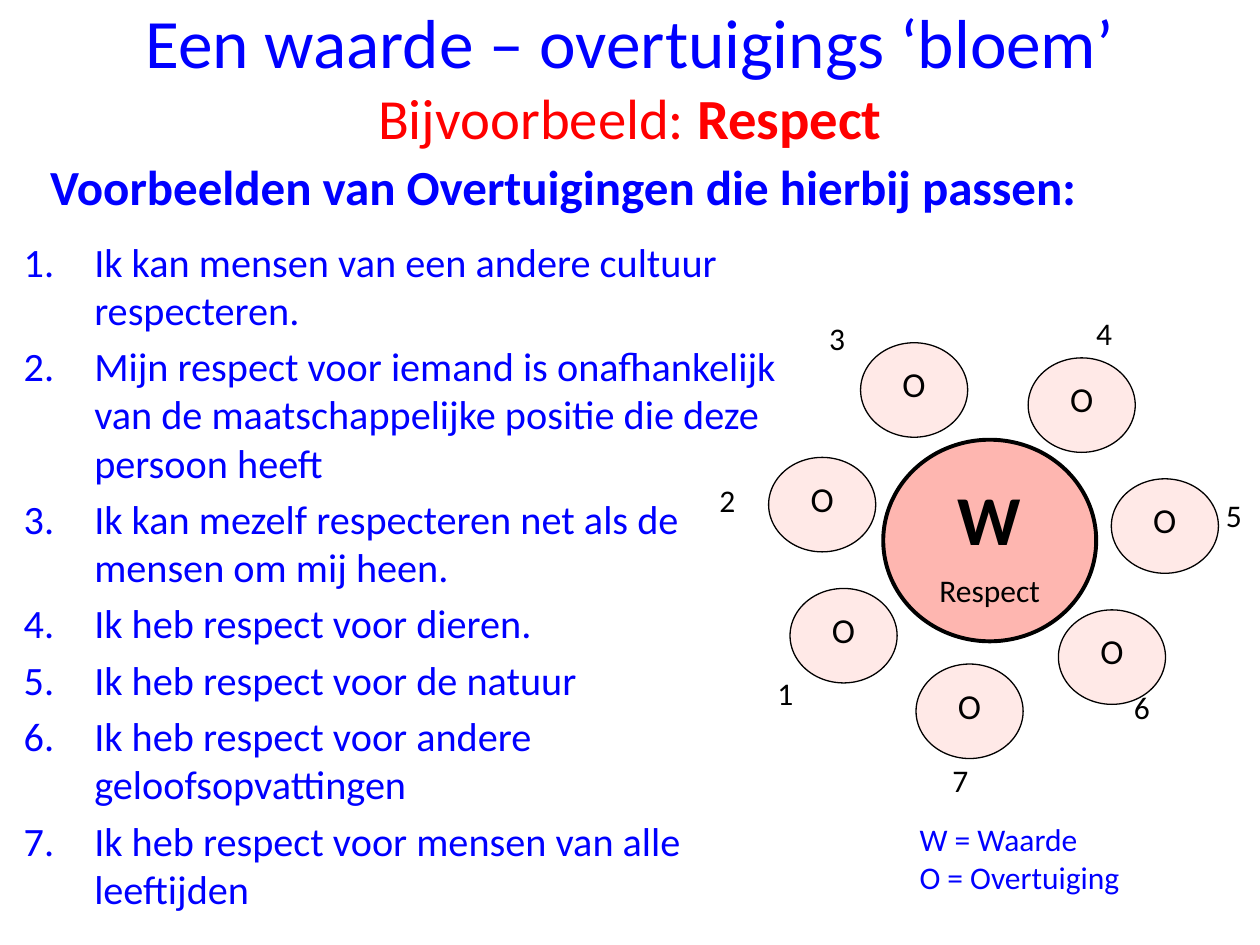
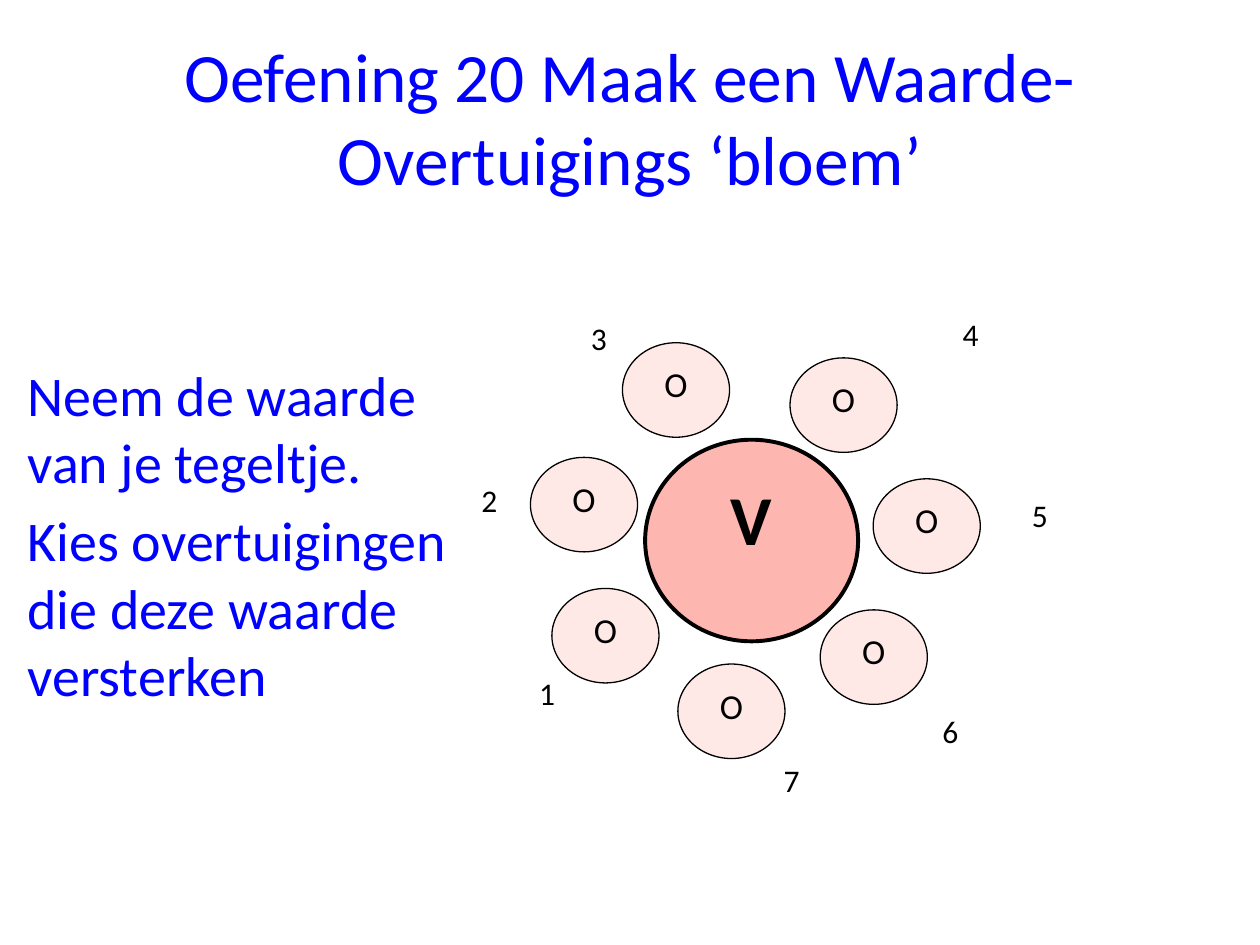
from dataclasses import dataclass

from lxml import etree
from pptx import Presentation
from pptx.dml.color import RGBColor
from pptx.enum.shapes import MSO_SHAPE
from pptx.enum.text import MSO_ANCHOR, MSO_AUTO_SIZE, PP_ALIGN
from pptx.oxml.ns import qn
from pptx.util import Inches, Pt

OVAL, RECT = MSO_SHAPE.OVAL, MSO_SHAPE.RECTANGLE
LEFT, CENTER = PP_ALIGN.LEFT, PP_ALIGN.CENTER
TOP, MIDDLE = MSO_ANCHOR.TOP, MSO_ANCHOR.MIDDLE
NO_FIT = MSO_AUTO_SIZE.NONE
TITLE_ONLY = 5


@dataclass(frozen=True)
class Theme:
    font: str = "Calibri"
    blue: str = "0000FF"
    red: str = "FF0000"
    black: str = "000000"
    white: str = "FFFFFF"
    heart: str = "FEB6B0"
    petal: str = "FFE9E7"
    title: float = 39.6
    sub: float = 32.4
    task: float = 32
    head: float = 28
    list: float = 23
    value: float = 40
    belief: float = 20
    small: float = 18


THEME = Theme()

# Offsets from the top left corner of the flower, for beliefs 1 to 7
PETALS = [(0.56, 2.18), (0.39, 1.14), (1.12, 0.23), (2.45, 0.35),
          (3.11, 1.31), (2.69, 2.35), (1.56, 2.78)]
PETAL_SIZE = (0.85, 0.75)
LABELS = [(0.46, 2.86), (0, 1.33), (0.87, 0.04), (2.99, 0),
          (4.02, 1.45), (3.29, 2.97), (1.85, 3.55)]
WIDE_LABELS = LABELS[:3] + [(3.82, 0.01), (4.37, 1.45), (3.66, 3.16), (2.4, 3.55)]
LABEL_SIZE = (0.27, 0.47)

BELIEFS = [
    "Ik kan mensen van een andere cultuur respecteren.",
    "Mijn respect voor iemand is onafhankelijk van de maatschappelijke "
    "positie die deze persoon heeft",
    "Ik kan mezelf respecteren net als de mensen om mij heen.",
    "Ik heb respect voor dieren.",
    "Ik heb respect voor de natuur",
    "Ik heb respect voor andere geloofsopvattingen",
    "Ik heb respect voor mensen van alle leeftijden",
]
TASK = ["Neem de waarde van je tegeltje.",
        "Kies overtuigingen die deze waarde versterken"]


def assign(target, values):
    for name, value in values.items():
        setattr(target, name, value)


def add_run(para, text, size, color, bold=False):
    run = para.add_run()
    run.text = text
    assign(run.font, {"name": THEME.font, "size": Pt(size), "bold": bold})
    run.font.color.rgb = RGBColor.from_string(color)


def set_frame(frame, anchor=TOP, inset=None):
    assign(frame, {"word_wrap": True, "auto_size": NO_FIT, "vertical_anchor": anchor})
    if inset is not None:
        sides = ("left", "right", "top", "bottom")
        assign(frame, {f"margin_{side}": Inches(inset) for side in sides})


def set_indent(para, hang, numbered):
    props = para._p.get_or_add_pPr()
    props.set("marL", str(Inches(hang)))
    props.set("indent", str(-Inches(hang)))
    if numbered:
        etree.SubElement(props, qn("a:buFont"), typeface="+mj-lt")
        etree.SubElement(props, qn("a:buAutoNum"), type="arabicPeriod")


def add_text(slide, box, lines, size, color, align=LEFT, inset=None,
             bold=False, gap=0, hang=0, numbered=False):
    """Add a text box; gap is the space before a paragraph as a share of its size."""
    frame = slide.shapes.add_textbox(*map(Inches, box)).text_frame
    set_frame(frame, inset=inset)
    for i, line in enumerate(lines):
        para = frame.add_paragraph() if i else frame.paragraphs[0]
        assign(para, {"alignment": align, "space_before": Pt(size * gap)})
        if hang:
            set_indent(para, hang, numbered)
        add_run(para, line, size, color, bold)


def add_part(slide, kind, box, fill, line, weight, text, size,
             align=CENTER, inset=None, bold=False):
    """Add a filled shape with one short text at its top."""
    shape = slide.shapes.add_shape(kind, *map(Inches, box))
    shape.shadow.inherit = False
    shape.fill.solid()
    shape.fill.fore_color.rgb = RGBColor.from_string(fill)
    shape.line.color.rgb = RGBColor.from_string(line)
    shape.line.width = Pt(weight)
    set_frame(shape.text_frame, inset=inset)
    para = shape.text_frame.paragraphs[0]
    assign(para, {"alignment": align, "space_after": Pt(10)})
    add_run(para, text, size, THEME.black, bold)


def add_title(slide, top, rows):
    """Fill the title; each row is a list of run arguments."""
    title = slide.shapes.title
    spots = {"left": 0.5, "top": top, "width": 9, "height": 1.25}
    assign(title, {name: Inches(spot) for name, spot in spots.items()})
    set_frame(title.text_frame, MIDDLE)
    para = title.text_frame.paragraphs[0]
    para.alignment = CENTER
    for i, row in enumerate(rows):
        if i:
            para.add_line_break()
        for run in row:
            add_run(para, *run)


def add_flower(slide, left, top, letter, labels, caption=None):
    def place(spot, size):
        return (left + spot[0], top + spot[1], *size)

    add_part(slide, OVAL, place((1.3, 1), (1.69, 1.6)), THEME.heart, THEME.black,
             2.25, letter, THEME.value, bold=True)
    if caption:
        add_text(slide, place((1.71, 2.04), (0.87, 0.35)), [caption],
                 THEME.small, THEME.black, CENTER, inset=0)
    for number, spot in enumerate(labels, 1):
        add_part(slide, RECT, place(spot, LABEL_SIZE), THEME.white, THEME.white,
                 0.75, str(number), THEME.small, LEFT, inset=0)
    for spot in PETALS:
        add_part(slide, OVAL, place(spot, PETAL_SIZE), THEME.petal, THEME.black,
                 0.75, "O", THEME.belief)


def add_slide(deck):
    return deck.slides.add_slide(deck.slide_layouts[TITLE_ONLY])


def build_example(deck):
    slide = add_slide(deck)
    add_title(slide, -0.03, [
        [("Een waarde – overtuigings ‘bloem’", THEME.title, THEME.blue)],
        [("Bijvoorbeeld: ", THEME.sub, THEME.red),
         ("Respect", THEME.sub, THEME.red, True)],
    ])
    add_text(slide, (0.09, 1.83, 6.24, 5.75), BELIEFS, THEME.list, THEME.blue,
             gap=0.2, hang=0.56, numbered=True)
    add_flower(slide, 5.71, 2.49, "W", LABELS, "Respect")
    add_text(slide, (7.2, 6.46, 2.17, 0.71), ["W = Waarde", "O = Overtuiging"],
             THEME.small, THEME.blue)
    add_text(slide, (0.3, 1.19, 8.52, 0.58),
             ["Voorbeelden van Overtuigingen die hierbij passen:"],
             THEME.head, THEME.blue, bold=True, gap=0.2, hang=0.38)


def build_task(deck):
    slide = add_slide(deck)
    add_title(slide, 0.3, [[("Oefening 20 Maak een Waarde-Overtuigings ‘bloem’",
                             THEME.title, THEME.blue)]])
    add_text(slide, (0.12, 2.81, 3.62, 2.68), TASK, THEME.task, THEME.blue, gap=0.2)
    add_flower(slide, 3.82, 2.49, "V", WIDE_LABELS)


def main():
    deck = Presentation()
    assign(deck, {"slide_width": Inches(10), "slide_height": Inches(7.5)})
    build_example(deck)
    build_task(deck)
    deck.save("out.pptx")


if __name__ == "__main__":
    main()
